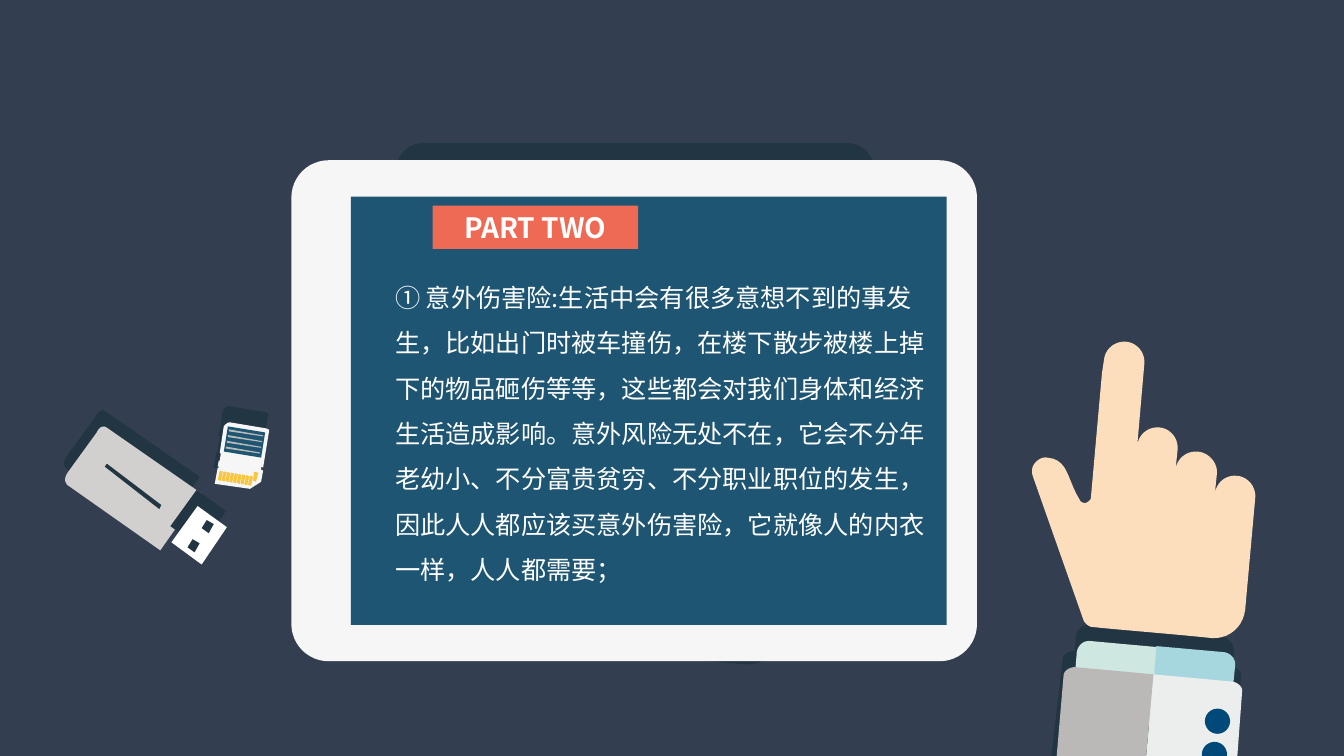
"""Build a section slide with a tablet, a USB stick, a memory card and a pointing hand."""
from pptx import Presentation
from pptx.dml.color import RGBColor
from pptx.enum.shapes import MSO_SHAPE as Preset
from pptx.enum.text import MSO_ANCHOR as Anchor, MSO_AUTO_SIZE as AutoSize, PP_ALIGN as Align
from pptx.oxml.ns import qn
from pptx.util import Inches, Pt

FONT = "Noto Sans CJK SC"
COLORS = {
    "night": "333F50", "shade": "223543", "screen": "1E5573", "casing": "F6F6F6",
    "stick": "D1D0CE", "white": "FFFFFF", "gold": "F9C541", "stripe": "BBBAB7",
    "switch": "EBF6FB", "mint": "CEE7E1", "aqua": "A7D7DE", "sleeve_light": "ECEEED",
    "sleeve_dark": "BAB9B7", "skin": "FCDDBC", "button": "004978", "coral": "EF6A54",
}
SHADOW_SHIFT = (-0.01, -0.16)

STICK = [(0.96, 4.29), (0.67, 4.69), (0.61, 4.78, 0.68, 4.82, 0.68, 4.82), (1.59, 5.46),
         (1.99, 4.89), (1.07, 4.25), (1, 4.19, 0.96, 4.29, 0.96, 4.29)]
PLUG = [(2.25, 5.23), (1.96, 5.02), (1.7, 5.38), (2, 5.6)]
PLUG_HOLE = [(1.93, 5.48), (1.86, 5.43), (1.91, 5.35), (1.98, 5.39)]
STICK_MARK = [(1.04, 4.63), (1.06, 4.6), (1.6, 5.01), (1.58, 5.05)]
CARD = [(2.64, 4.25), (2.64, 4.25, 2.67, 4.26, 2.67, 4.27), (2.61, 4.64), (2.59, 4.63),
        (2.59, 4.66), (2.61, 4.67), (2.59, 4.78), (2.48, 4.85), (2.13, 4.8), (2.16, 4.64),
        (2.17, 4.64), (2.19, 4.5), (2.18, 4.49), (2.22, 4.23),
        (2.22, 4.23, 2.25, 4.19, 2.28, 4.19)]
CARD_SWITCH = [(2.16, 4.63), (2.17, 4.57), (2.19, 4.57), (2.18, 4.63)]
CARD_LABEL = [(2.22, 4.48), (2.26, 4.23), (2.63, 4.29), (2.59, 4.54)]
LABEL_STRIPE = [(2.24, 4.43), (2.58, 4.49), (2.58, 4.5), (2.24, 4.45)]
CONTACT = [(2.16, 4.76), (2.18, 4.67), (2.21, 4.68), (2.19, 4.77)]
LONG_CONTACT = [(2.51, 4.77), (2.52, 4.68), (2.56, 4.69), (2.54, 4.78)]
TABLET_SHADOW = [(8.41, 1.42), (4.19, 1.42), (4.05, 1.42, 3.93, 1.54, 3.93, 1.68),
                 (3.93, 4.62), (3.93, 4.76, 4.05, 4.88, 4.19, 4.88), (5.43, 4.88),
                 (5.96, 6.4), (5.98, 6.44, 6.02, 6.47, 6.06, 6.47),
                 (6.25, 6.49, 6.95, 6.55, 7.38, 6.59), (7.57, 6.61, 7.74, 6.47, 7.75, 6.28),
                 (7.87, 5.01), (7.87, 4.96, 7.86, 4.92, 7.84, 4.88), (8.41, 4.88),
                 (8.55, 4.88, 8.67, 4.76, 8.67, 4.62), (8.67, 1.68),
                 (8.67, 1.54, 8.55, 1.42, 8.41, 1.42)]
SLEEVE_SHADOW = [(10.67, 6.31), (10.66, 6.46), (10.59, 6.46, 10.54, 6.49, 10.54, 6.54),
                 (10.4, 7.74), (12.24, 7.65), (12.31, 6.7),
                 (12.31, 6.66, 12.27, 6.62, 12.22, 6.61), (12.24, 6.46),
                 (12.24, 6.39, 12.19, 6.33, 12.12, 6.32), (10.81, 6.2),
                 (10.74, 6.19, 10.68, 6.24, 10.67, 6.31)]
CUFF_LEFT = [(11.48, 6.42), (10.82, 6.36), (10.75, 6.35, 10.69, 6.4, 10.68, 6.47),
             (10.64, 6.97), (10.63, 7.04, 10.68, 7.1, 10.75, 7.11), (11.41, 7.17)]
CUFF_RIGHT = [(12.14, 6.47), (11.47, 6.41), (11.41, 7.17), (12.07, 7.23),
              (12.14, 7.23, 12.2, 7.18, 12.2, 7.11), (12.25, 6.61),
              (12.26, 6.54, 12.21, 6.48, 12.14, 6.47)]
SLEEVE_RIGHT = [(12.2, 6.76), (11.44, 6.69), (11.34, 7.81), (12.25, 7.8), (12.32, 6.85),
                (12.32, 6.81, 12.27, 6.76, 12.2, 6.76)]
SLEEVE_LEFT = [(11.44, 6.69), (10.68, 6.62), (10.62, 6.61, 10.56, 6.65, 10.55, 6.69),
               (10.46, 7.74), (10.75, 7.78, 11.04, 7.8, 11.34, 7.81)]
HAND = [(12.27, 4.72), (12.16, 4.71, 12.07, 4.78, 12.05, 4.89), (12.07, 4.7),
        (12.08, 4.59, 11.99, 4.49, 11.88, 4.48), (11.77, 4.47, 11.67, 4.55, 11.66, 4.66),
        (11.68, 4.46), (11.69, 4.35, 11.61, 4.25, 11.5, 4.24),
        (11.39, 4.23, 11.29, 4.31, 11.28, 4.42), (11.35, 3.61),
        (11.36, 3.5, 11.28, 3.4, 11.17, 3.39), (11.06, 3.38, 10.96, 3.46, 10.95, 3.57),
        (10.93, 3.7), (10.82, 4.94), (10.82, 4.96, 10.79, 4.98, 10.77, 4.99),
        (10.74, 4.99, 10.72, 4.98, 10.71, 4.96), (10.58, 4.75, 10.6, 4.56, 10.39, 4.54),
        (10.34, 4.53, 10.29, 4.56, 10.26, 4.6), (10.23, 4.64, 10.23, 4.69, 10.25, 4.74),
        (10.75, 6.16), (10.77, 6.19, 10.8, 6.22, 10.84, 6.22),
        (11.01, 6.24, 11.64, 6.29, 12.02, 6.33), (12.19, 6.34, 12.33, 6.22, 12.35, 6.05),
        (12.45, 4.94), (12.46, 4.83, 12.38, 4.73, 12.27, 4.72)]

BODY = ("① 意外伤害险:生活中会有很多意想不到的事发生，比如出门时被车撞伤，在楼下散步被楼上掉下的物品"
        "砸伤等等，这些都会对我们身体和经济生活造成影响。意外风险无处不在，它会不分年老幼小、不分富贵"
        "贫穷、不分职业职位的发生，因此人人都应该买意外伤害险，它就像人的内衣一样，人人都需要；")


def paint(shape, color):
    """Give a shape a flat fill without line or shadow."""
    shape.shadow.inherit = False
    shape.fill.solid()
    shape.fill.fore_color.rgb = RGBColor.from_string(COLORS[color])
    shape.line.fill.background()


def trace(outline, steps=10):
    """Turn corners (x, y) and cubic curves (two controls and an end) into points."""
    points = [outline[0]]
    for part in outline[1:]:
        if len(part) == 2:
            points.append(part)
            continue
        nodes = [points[-1], part[:2], part[2:4], part[4:]]
        for step in range(1, steps + 1):
            t = step / steps
            weights = ((1 - t) ** 3, 3 * t * (1 - t) ** 2, 3 * t * t * (1 - t), t ** 3)
            points.append(tuple(sum(w * n[axis] for w, n in zip(weights, nodes))
                                for axis in (0, 1)))
    return points


def add_outline(group, outline, color, shift=(0, 0)):
    """Draw a filled closed outline, moved by shift."""
    points = [(Inches(x + shift[0]), Inches(y + shift[1])) for x, y in trace(outline)]
    builder = group.shapes.build_freeform(*points[0], scale=1.0)
    builder.add_line_segments(points[1:], close=True)
    paint(builder.convert_to_shape(), color)


def add_preset(group, preset, box, color):
    """Draw a filled preset shape."""
    shape = group.shapes.add_shape(preset, *map(Inches, box))
    paint(shape, color)
    return shape


def write(frame, text, size, bold=False, align=Align.LEFT, anchor=Anchor.TOP, spacing=1.0):
    """Put formatted text into a text frame."""
    frame.word_wrap = True
    frame.auto_size = AutoSize.NONE
    frame.vertical_anchor = anchor
    paragraph = frame.paragraphs[0]
    paragraph.alignment = align
    paragraph.line_spacing = spacing
    run = paragraph.add_run()
    run.text = text
    run.font.size = Pt(size)
    run.font.bold = bold
    run.font.name = FONT
    run.font.color.rgb = RGBColor.from_string(COLORS["white"])
    east_asian = run.font._element.makeelement(qn("a:ea"), {"typeface": FONT})
    run.font._element.find(qn("a:latin")).addnext(east_asian)


def draw_stick_and_card(group):
    """Draw the USB stick and the memory card with their shadows."""
    add_outline(group, STICK, "shade", SHADOW_SHIFT)
    add_outline(group, STICK, "stick")
    add_outline(group, STICK_MARK, "shade")
    add_outline(group, PLUG, "shade", SHADOW_SHIFT)
    add_outline(group, CARD, "shade", SHADOW_SHIFT)
    add_outline(group, PLUG, "white")
    for shift in ((0, 0), (0.14, -0.19)):
        add_outline(group, PLUG_HOLE, "shade", shift)
    add_outline(group, CARD_SWITCH, "switch")
    add_outline(group, CARD, "casing")
    for index in range(9):
        add_outline(group, CONTACT, "gold", (0.3 * index / 8, 0.05 * index / 8))
    add_outline(group, LONG_CONTACT, "gold")
    add_outline(group, CARD_LABEL, "screen")
    for index in range(4):
        add_outline(group, LABEL_STRIPE, "stripe", (0.01 * index, -0.17 * index / 3))


def draw_tablet(group):
    """Draw the tablet, its screen and its shadow."""
    add_outline(group, TABLET_SHADOW, "shade")
    casing = add_preset(group, Preset.ROUNDED_RECTANGLE, (2.89, 1.59, 6.8, 4.97), "casing")
    casing.adjustments[0] = 0.37 / 4.97
    add_preset(group, Preset.RECTANGLE, (3.48, 1.95, 5.91, 4.25), "screen")


def draw_hand(group):
    """Draw the pointing hand with its cuff and sleeve."""
    for outline, color in ((SLEEVE_SHADOW, "shade"), (CUFF_LEFT, "mint"),
                           (CUFF_RIGHT, "aqua"), (SLEEVE_RIGHT, "sleeve_light"),
                           (SLEEVE_LEFT, "sleeve_dark"), (HAND, "skin")):
        add_outline(group, outline, color)
    for left, top in ((11.95, 7.03), (11.92, 7.36)):
        add_preset(group, Preset.OVAL, (left, top, 0.25, 0.25), "button")


def add_heading(slide):
    """Format the title placeholder as a label in front of the tablet."""
    title = slide.shapes.title
    title.left, title.top, title.width, title.height = map(Inches, (4.29, 2.04, 2.04, 0.43))
    title.fill.solid()
    title.fill.fore_color.rgb = RGBColor.from_string(COLORS["coral"])
    write(title.text_frame, "PART TWO", 20, bold=True, align=Align.CENTER, anchor=Anchor.MIDDLE)
    title.element.getparent().append(title.element)


def main():
    """Build and save the slide."""
    deck = Presentation()
    deck.slide_width, deck.slide_height = Inches(13.33), Inches(7.5)
    slide = deck.slides.add_slide(deck.slide_layouts[5])
    slide.background.fill.solid()
    slide.background.fill.fore_color.rgb = RGBColor.from_string(COLORS["night"])
    for draw in (draw_stick_and_card, draw_tablet, draw_hand):
        draw(slide.shapes.add_group_shape())
    add_heading(slide)
    body = slide.shapes.add_textbox(*map(Inches, (3.82, 2.6, 5.45, 3.28)))
    write(body.text_frame, BODY, 18, spacing=1.5)
    deck.save("out.pptx")


if __name__ == "__main__":
    main()
